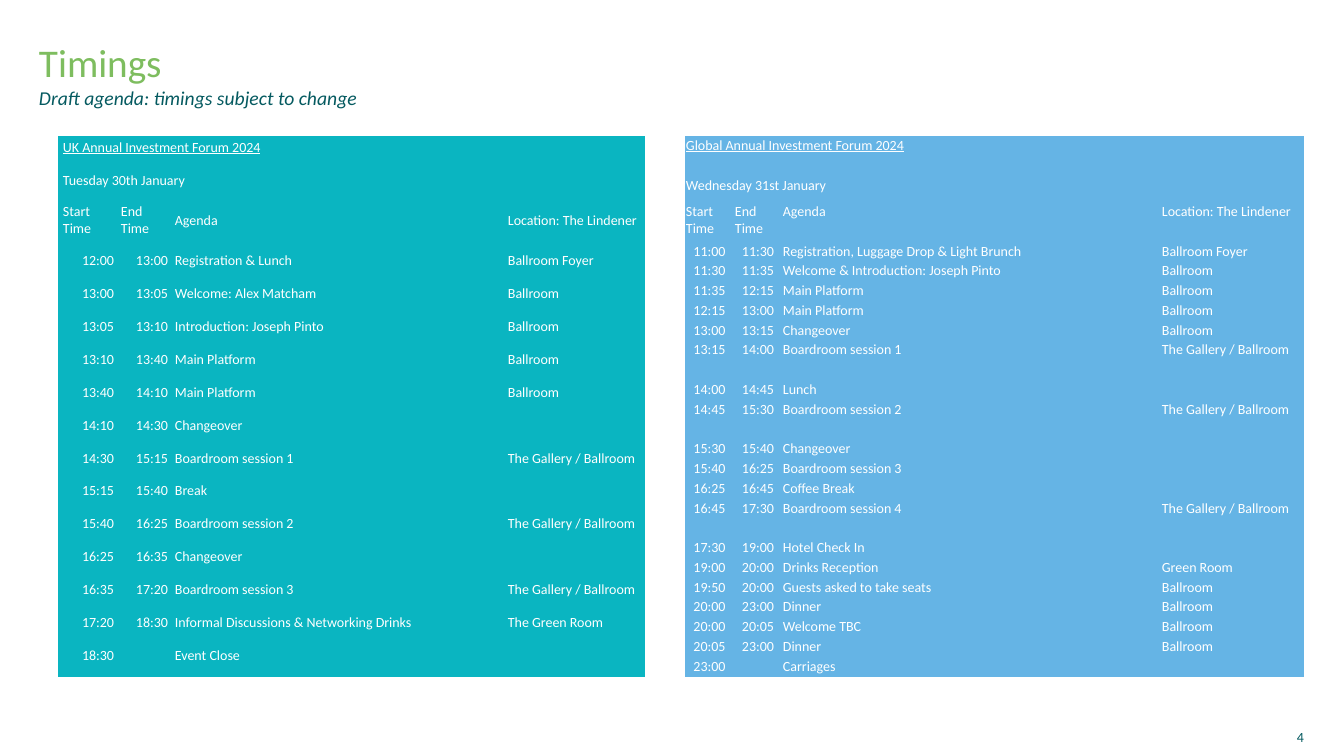
"""Build the Timings slide: two day agendas side by side."""
from lxml import etree
from pptx import Presentation
from pptx.dml.color import RGBColor
from pptx.enum.text import MSO_ANCHOR as ANCHOR, PP_ALIGN as ALIGN
from pptx.oxml import parse_xml
from pptx.oxml.ns import nsdecls, qn
from pptx.util import Pt

PX = 914400 / 100.8
GREEN = RGBColor(0x7E, 0xBD, 0x5F)
DARK_TEAL = RGBColor(0x05, 0x5A, 0x60)
TEAL = RGBColor(0x0A, 0xB5, 0xC1)
SKY = RGBColor(0x65, 0xB4, 0xE5)
WHITE = RGBColor(0xFF, 0xFF, 0xFF)
NO_STYLE = "{2D5ABB26-0587-4C30-8999-92F81FD0307C}"
LEFT_EDGE = (f'<a:lnL {nsdecls("a")} w="12700"><a:solidFill>'
             '<a:srgbClr val="FFFFFF"/></a:solidFill></a:lnL>')
TABLE_TOP, TABLE_HEIGHT = 136, 541


def px(length):
    return round(length * PX)


def write(frame, text, size=10, color=WHITE, align=ALIGN.LEFT, italic=False,
          underline=False, spacing=None, after=None):
    paragraph = frame.paragraphs[0]
    paragraph.alignment = align
    if spacing:
        paragraph.line_spacing = spacing
    if after:
        paragraph.space_after = Pt(after)
    run = paragraph.add_run()
    run.text = text
    font = run.font
    font.name, font.size, font.color.rgb = "Calibri", Pt(size), color
    font.italic, font.underline = italic, underline


HEADINGS = ("Start Time", "End Time", "Agenda", "Location: The Lindener")
GALLERY = "The Gallery / Ballroom"

uk_sessions = [
    ("12:00", "13:00", "Registration & Lunch", "Ballroom Foyer"),
    ("13:00", "13:05", "Welcome: Alex Matcham", "Ballroom"),
    ("13:05", "13:10", "Introduction: Joseph Pinto", "Ballroom"),
    ("13:10", "13:40", "Main Platform", "Ballroom"),
    ("13:40", "14:10", "Main Platform", "Ballroom"),
    ("14:10", "14:30", "Changeover", ""),
    ("14:30", "15:15", "Boardroom session 1", GALLERY),
    ("15:15", "15:40", "Break", ""),
    ("15:40", "16:25", "Boardroom session 2", GALLERY),
    ("16:25", "16:35", "Changeover", ""),
    ("16:35", "17:20", "Boardroom session 3", GALLERY),
    ("17:20", "18:30", "Informal Discussions & Networking Drinks", "The Green Room"),
    ("18:30", "", "Event Close", ""),
]
global_sessions = [
    ("11:00", "11:30", "Registration, Luggage Drop & Light Brunch", "Ballroom Foyer"),
    ("11:30", "11:35", "Welcome & Introduction: Joseph Pinto", "Ballroom"),
    ("11:35", "12:15", "Main Platform", "Ballroom"),
    ("12:15", "13:00", "Main Platform", "Ballroom"),
    ("13:00", "13:15", "Changeover", "Ballroom"),
    ("13:15", "14:00", "Boardroom session 1", GALLERY),
    ("14:00", "14:45", "Lunch", ""),
    ("14:45", "15:30", "Boardroom session 2", GALLERY),
    ("15:30", "15:40", "Changeover", ""),
    ("15:40", "16:25", "Boardroom session 3", ""),
    ("16:25", "16:45", "Coffee Break", ""),
    ("16:45", "17:30", "Boardroom session 4", GALLERY),
    ("17:30", "19:00", "Hotel Check In", ""),
    ("19:00", "20:00", "Drinks Reception", "Green Room"),
    ("19:50", "20:00", "Guests asked to take seats", "Ballroom"),
    ("20:00", "23:00", "Dinner", "Ballroom"),
    ("20:00", "20:05", "Welcome TBC", "Ballroom"),
    ("20:05", "23:00", "Dinner", "Ballroom"),
    ("23:00", "", "Carriages", ""),
]

uk_row = (TABLE_HEIGHT - 48) / (len(uk_sessions) + 2)
uk_heights = [uk_row, uk_row, 48] + [uk_row] * len(uk_sessions)
global_units = [2 if place == GALLERY else 1 for *_, place in global_sessions]
global_row = (TABLE_HEIGHT - 106) / sum(global_units)
global_heights = [40, 26, 40] + [global_row * units for units in global_units]

forums = [
    dict(title="Global Annual Investment Forum 2024", day="Wednesday 31st January",
         sessions=global_sessions, left=685, widths=(49, 48, 379, 143),
         heights=global_heights, fill=SKY, insets=(1, 1, 1, 0),
         anchor=ANCHOR.TOP, time_align=ALIGN.CENTER, edge=False),
    dict(title="UK Annual Investment Forum 2024", day="Tuesday 30th January",
         sessions=uk_sessions, left=57, widths=(58, 54, 333, 143),
         heights=uk_heights, fill=TEAL, insets=(6, 2, 1, 12),
         anchor=ANCHOR.MIDDLE, time_align=ALIGN.RIGHT, edge=True),
]
captions = [
    ("Timings", (39, 39, 1265, 55), (0, 5, 0, 5), ANCHOR.TOP,
     dict(size=28, color=GREEN, spacing=0.9)),
    ("Draft agenda: timings subject to change", (39, 84, 1265, 45), (0, 5, 10, 5),
     ANCHOR.TOP, dict(size=14, color=DARK_TEAL, italic=True, spacing=0.9)),
    ("4", (1113, 718, 191, 38), (10, 5, 0, 5), ANCHOR.MIDDLE,
     dict(color=DARK_TEAL, align=ALIGN.RIGHT, after=6)),
]

deck = Presentation()
deck.slide_width, deck.slide_height = px(1344), px(756)
slide = deck.slides.add_slide(deck.slide_layouts[6])

for text, place, insets, anchor, style in captions:
    frame = slide.shapes.add_textbox(*map(px, place)).text_frame
    frame.word_wrap = True
    frame.vertical_anchor = anchor
    (frame.margin_left, frame.margin_top,
     frame.margin_right, frame.margin_bottom) = map(px, insets)
    write(frame, text, **style)

for forum in forums:
    rows = [(forum["title"], "", "", ""), (forum["day"], "", "", ""), HEADINGS]
    rows += forum["sessions"]
    agenda = slide.shapes.add_table(
        len(rows), 4, px(forum["left"]), px(TABLE_TOP),
        px(sum(forum["widths"])), px(TABLE_HEIGHT)).table
    agenda.first_row = agenda.horz_banding = False
    agenda._tbl.tblPr.find(qn("a:tableStyleId")).text = NO_STYLE
    for column, width in zip(agenda.columns, forum["widths"]):
        column.width = px(width)
    for r, (entries, height) in enumerate(zip(rows, forum["heights"])):
        agenda.rows[r].height = px(height)
        for c, entry in enumerate(entries):
            cell = agenda.cell(r, c)
            cell.fill.solid()
            cell.fill.fore_color.rgb = forum["fill"]
            cell.vertical_anchor = forum["anchor"]
            (cell.margin_left, cell.margin_top,
             cell.margin_right, cell.margin_bottom) = map(px, forum["insets"])
            if forum["edge"] and c == 0:
                cell._tc.tcPr.insert(0, parse_xml(LEFT_EDGE))
            if entry:
                is_time = r > 2 and c < 2
                write(cell.text_frame, entry, underline=r == 0,
                      align=forum["time_align"] if is_time else ALIGN.LEFT)
            else:
                blank = cell.text_frame.paragraphs[0]._p
                etree.SubElement(blank, qn("a:endParaRPr")).set("sz", "1000")
        if r < 2:
            agenda.cell(r, 0).merge(agenda.cell(r, 2))

deck.save("out.pptx")
